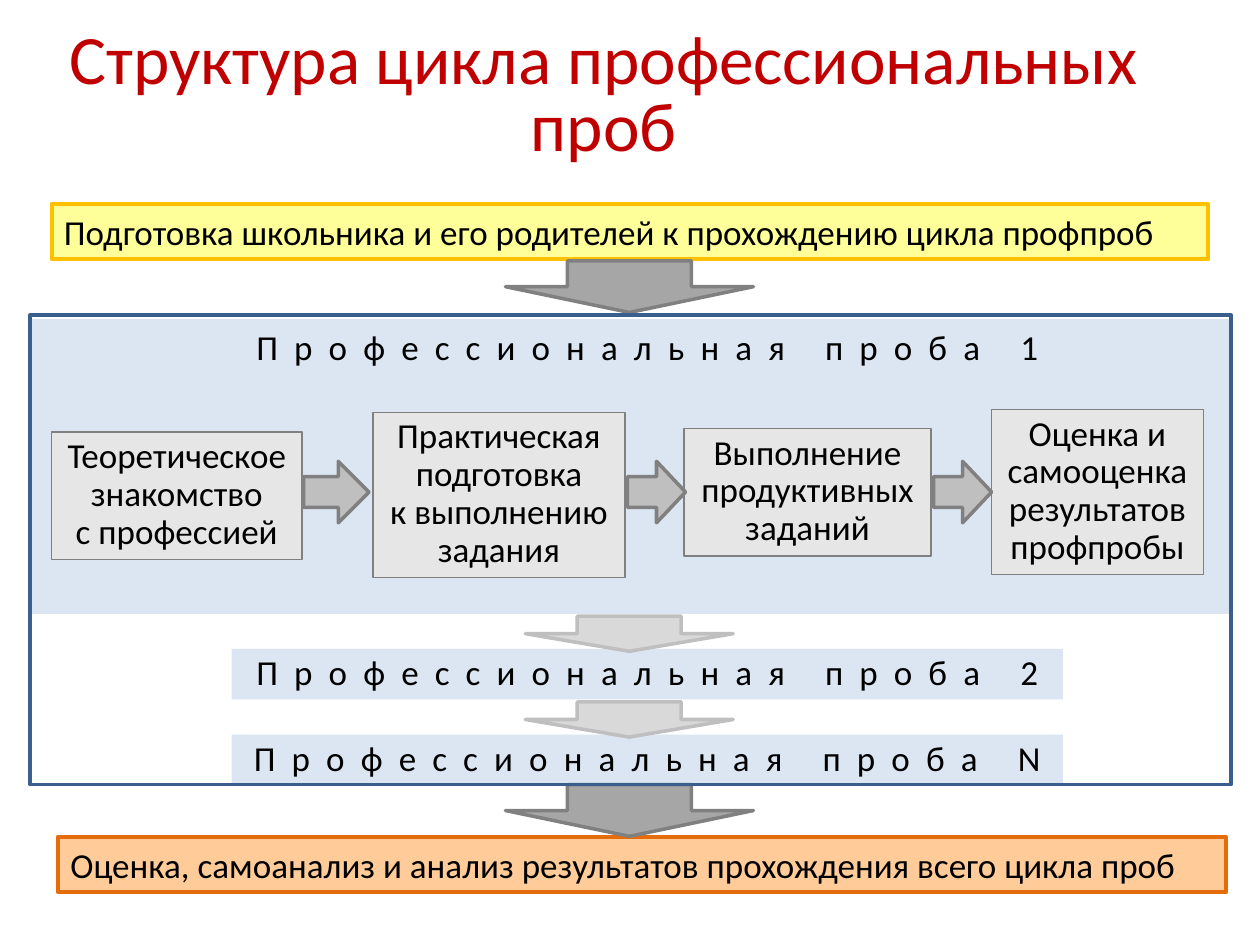
from pptx import Presentation
from pptx import util as u
from pptx.dml.color import RGBColor
from pptx.enum import shapes, text

RECT = shapes.MSO_SHAPE.RECTANGLE
DOWN = shapes.MSO_SHAPE.DOWN_ARROW
RIGHT = shapes.MSO_SHAPE.RIGHT_ARROW
CENTER = text.PP_ALIGN.CENTER
LEFT = text.PP_ALIGN.LEFT
PALE_BLUE = "DCE6F2"
GREY = "808080"


def rgb(value):
    return RGBColor.from_string(value)


class Deck:
    """Style of the slide and the slide being filled."""

    font = "Calibri"
    size = 20

    def __init__(self):
        self.prs = Presentation()
        self.prs.slide_width, self.prs.slide_height = u.Cm(25.4), u.Cm(19.05)
        self.s = self.prs.slides.add_slide(self.prs.slide_layouts[5])

    def set_text(self, sp, words, size, color, align, spacing):
        tf = sp.text_frame
        tf.auto_size = text.MSO_AUTO_SIZE.NONE
        p = tf.paragraphs[0]
        p.text = words
        p.alignment = align
        p.line_spacing = spacing
        p.font.name = self.font
        p.font.size = u.Pt(size)
        p.font.color.rgb = rgb(color)
        return p

    def title(self, words, *box):
        sp = self.s.shapes.title
        sp.left, sp.top, sp.width, sp.height = map(u.Cm, box)
        sp.text_frame.vertical_anchor = text.MSO_ANCHOR.MIDDLE
        self.set_text(sp, words, 39.6, "C00000", CENTER, 0.8)

    def shape(self, kind, box, fill=None, line=None, weight=2):
        sp = self.s.shapes.add_shape(kind, *map(u.Cm, box))
        sp.shadow.inherit = False
        if fill:
            sp.fill.solid()
            sp.fill.fore_color.rgb = rgb(fill)
        else:
            sp.fill.background()
        if line:
            sp.line.color.rgb = rgb(line)
            sp.line.width = u.Pt(weight)
        else:
            sp.line.fill.background()
        return sp

    def box(self, words, box, fill=None, line=None, weight=2,
            align=CENTER, spacing=0.9):
        sp = self.shape(RECT, box, fill, line, weight)
        sp.text_frame.word_wrap = align == LEFT
        sp.text_frame.vertical_anchor = text.MSO_ANCHOR.TOP
        return self.set_text(sp, words, self.size, "000000", align, spacing)

    def spaced_bar(self, words, top, fill=None):
        """Bar whose heading is set with wide letter spacing."""
        p = self.box(words, (4.67, top, 16.76, 1.02), fill)
        for r in p.runs:
            r.font._element.set("spc", "920")


def main():
    d = Deck()
    d.title("Структура цикла профессиональных проб", 0.74, 0.97, 22.86, 2.01)
    d.box("Подготовка школьника и его родителей к прохождению цикла профпроб",
          (1.04, 4.11, 23.32, 1.12), "FFFF99", "FFC000", 2.25, LEFT, 1.0)
    d.shape(RECT, (0.61, 6.45, 24.21, 5.92), PALE_BLUE, PALE_BLUE, 0.5)

    steps = [
        ("Теоретическое\nзнакомство\nс профессией", (1.04, 8.71, 5.05, 2.57)),
        ("Практическая\nподготовка\nк выполнению\nзадания",
         (7.52, 8.31, 5.08, 3.33)),
        ("Выполнение\nпродуктивных\nзаданий", (13.79, 8.64, 4.98, 2.57)),
        ("Оценка и\nсамооценка\nрезультатов\nпрофпробы",
         (19.99, 8.26, 4.27, 3.33)),
    ]
    for words, box in steps:
        d.box(words, box, "E6E6E6", GREY, 0.75)
    for left, width in ((6.12, 1.32), (12.65, 1.17), (18.82, 1.17)):
        d.shape(RIGHT, (left, 9.3, width, 1.24), "BFBFBF", GREY)

    d.spaced_bar("Профессиональная проба 1", 6.53)
    d.spaced_bar("Профессиональная проба 2", 13.08, PALE_BLUE)
    d.spaced_bar("Профессиональная проба N", 14.81, PALE_BLUE)
    d.box("Оценка, самоанализ и анализ результатов прохождения всего цикла проб",
          (1.17, 16.87, 23.55, 1.12), "FFCC99", "E46C0A", 2.25, LEFT, 1.0)

    for top in (5.26, 15.82):
        d.shape(DOWN, (10.19, top, 5.0, 1.04), "A6A6A6", GREY)
    for top in (12.42, 14.15):
        d.shape(DOWN, (10.59, top, 4.19, 0.71), "D9D9D9", "BFBFBF")
    d.shape(RECT, (0.61, 6.35, 24.21, 9.47), line="3A5F8C")

    d.prs.save("out.pptx")


if __name__ == "__main__":
    main()
